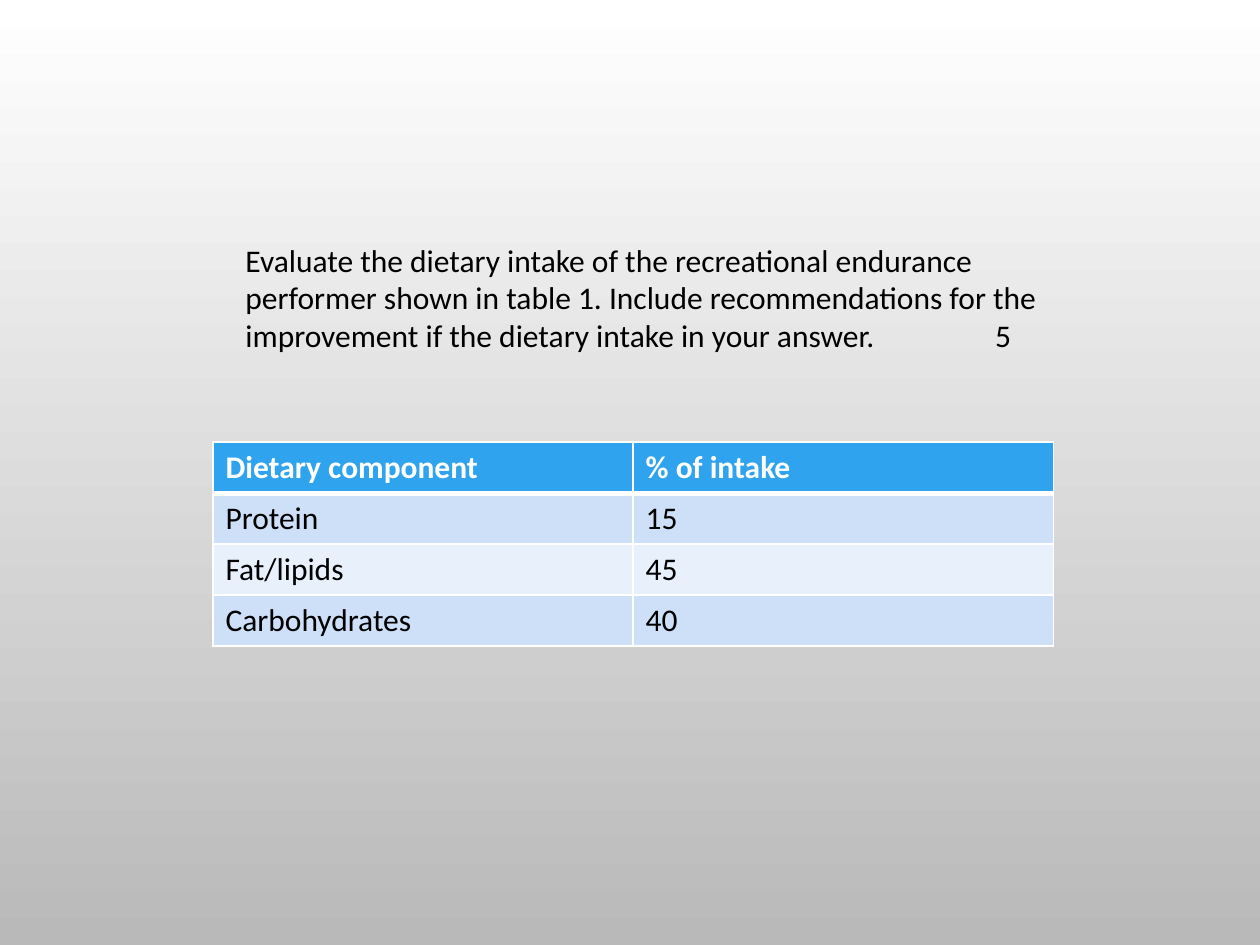
from lxml import etree
from pptx import Presentation
from pptx.dml.color import RGBColor
from pptx.enum.text import MSO_AUTO_SIZE
from pptx.oxml.ns import qn
from pptx.util import Inches, Pt

GROW = MSO_AUTO_SIZE.SHAPE_TO_FIT_TEXT
BLANK_LAYOUT = 6
COLORS = {
    "white": "FFFFFF",
    "grey": "B9B9B9",
    "black": "000000",
    "header": "2FA3EE",
    "band_dark": "CDE0F8",
    "band_light": "E8F0FC",
}
QUESTION = (
    "Evaluate the dietary intake of the recreational endurance performer "
    "shown in table 1. Include recommendations for the improvement if the "
    "dietary intake in your answer.\t5"
)
INTAKE = [
    ("Dietary component", "% of intake"),
    ("Protein", "15"),
    ("Fat/lipids", "45"),
    ("Carbohydrates", "40"),
]


def color(name):
    """Return the named colour."""
    return RGBColor.from_string(COLORS[name])


def write(para, text, color_name, bold=False):
    """Put one formatted span into a paragraph."""
    span = para.add_run()
    span.text = text
    formats = {"name": "Calibri", "size": Pt(18), "bold": bold}
    for attribute, value in formats.items():
        setattr(span.font, attribute, value)
    span.font.color.rgb = color(color_name)


def paint_background(page):
    """Shade the page from white at the top to grey at the bottom."""
    fill = page.background.fill
    fill.gradient()
    fill.gradient_angle = 270
    for stop, name, position in zip(fill.gradient_stops, ("white", "grey"), (0, 1)):
        stop.color.rgb = color(name)
        stop.position = position


def add_question(page):
    """Add the question with its mark at a tab stop."""
    box = page.shapes.add_textbox(Inches(1.85), Inches(1.86), Inches(6.77), Inches(1.01))
    frame = box.text_frame
    frame.word_wrap = True
    frame.auto_size = GROW
    para = frame.paragraphs[0]
    properties = para._p.get_or_add_pPr()
    tabs = etree.SubElement(properties, qn("a:tabLst"))
    etree.SubElement(tabs, qn("a:tab"), pos=str(Inches(5.95)), algn="l")
    write(para, QUESTION, "black")


def set_borders(cell, widths):
    """Draw white borders of the given point widths by side."""
    properties = cell._tc.get_or_add_tcPr()
    for side, width in widths.items():
        line = etree.SubElement(properties, qn(f"a:ln{side}"), w=str(Pt(width)))
        fill = etree.SubElement(line, qn("a:solidFill"))
        etree.SubElement(fill, qn("a:srgbClr"), val=COLORS["white"])


def add_intake_table(page):
    """Add the table of dietary intake."""
    frame = page.shapes.add_table(
        len(INTAKE), 2, Inches(1.69), Inches(3.51), Inches(6.67), Inches(1.62)
    )
    for row, values in enumerate(INTAKE):
        header = row == 0
        band = "header" if header else ("band_light", "band_dark")[row % 2]
        widths = {"L": 1, "R": 1, "T": 3 if row == 1 else 1, "B": 3 if header else 1}
        for column, value in enumerate(values):
            cell = frame.table.cell(row, column)
            set_borders(cell, widths)
            cell.fill.solid()
            cell.fill.fore_color.rgb = color(band)
            para = cell.text_frame.paragraphs[0]
            write(para, value, "white" if header else "black", header)


def main():
    """Build the deck and save it."""
    deck = Presentation()
    deck.slide_width, deck.slide_height = Inches(10), Inches(7.5)
    page = deck.slides.add_slide(deck.slide_layouts[BLANK_LAYOUT])
    paint_background(page)
    add_question(page)
    add_intake_table(page)
    deck.save("out.pptx")


if __name__ == "__main__":
    main()
